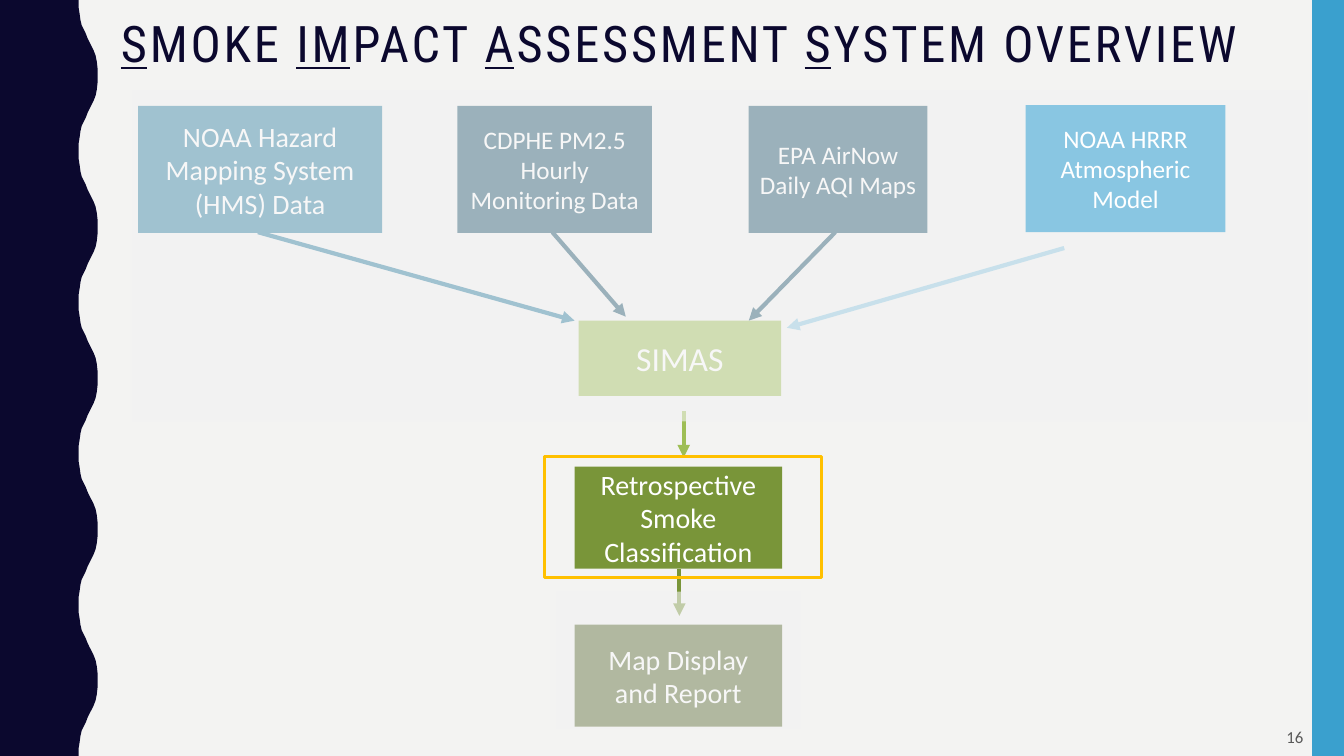
from dataclasses import dataclass

from lxml import etree
from pptx import Presentation, util as u
from pptx.dml.color import RGBColor
from pptx.enum import shapes, text
from pptx.oxml import ns


@dataclass(frozen=True)
class Theme:
    """Colours, fonts and type sizes of the slide."""
    paper: str = "F3F3F2"
    navy: str = "0B082E"
    blue: str = "3AA0CE"
    teal: str = "277A9F"
    deep: str = "1A516A"
    sky: str = "89C6E2"
    lime: str = "9EBE55"
    green: str = "799539"
    olive: str = "516326"
    veil: str = "F2F2F2"
    gold: str = "FFC000"
    grey: str = "595959"
    white: str = "FFFFFF"
    heading: str = "Roboto Condensed"
    body: str = "Calibri"
    title: int = 36
    hub: int = 24
    large: int = 20
    medium: int = 18
    small: int = 12


@dataclass(frozen=True)
class Box:
    """A rectangle in centimetres."""
    left: float
    top: float
    width: float
    height: float

    def inner(self, left, top, width, height):
        """Return a box placed relative to this one."""
        return Box(self.left + left, self.top + top, width, height)

    def lengths(self):
        """Return left, top, width and height as lengths."""
        return [u.Cm(side) for side in (self.left, self.top, self.width, self.height)]


THEME = Theme()
PAGE = Box(0, 0, 33.87, 19.05)
WAVE_PERIOD = 3.81
WAVE_RISE = [(1.98, 0), (1.98, 0.18), (2.01, 0.36), (2.03, 0.51), (2.06, 0.64),
             (2.11, 0.74), (2.16, 0.84), (2.21, 0.97), (2.26, 1.07), (2.31, 1.17),
             (2.36, 1.27), (2.41, 1.4), (2.44, 1.55), (2.46, 1.73), (2.46, 1.9)]


def color(code):
    """Turn a hex code into a colour."""
    return RGBColor.from_string(code)


def write_text(shape, spans, size=THEME.large, font=THEME.body, ink=THEME.white,
               align=text.PP_ALIGN.CENTER, anchor=text.MSO_ANCHOR.MIDDLE,
               spacing=None, tracking=None):
    """Fill a shape with one paragraph of (words, underlined) spans."""
    frame = shape.text_frame
    frame.word_wrap = True
    frame.auto_size = text.MSO_AUTO_SIZE.NONE
    frame.vertical_anchor = anchor
    para = frame.paragraphs[0]
    para.alignment = align
    if spacing:
        para.line_spacing = spacing
    for words, underlined in spans:
        span = para.add_run()
        span.text = words
        span.font.size = u.Pt(size)
        span.font.name = font
        span.font.color.rgb = color(ink)
        span.font.underline = underlined
        if tracking:
            span.font._element.set("spc", str(tracking * 100))


def add_box(page, box, fill=None, label=None, size=THEME.large, outline=None, alpha=None):
    """Draw a rectangle with optional fill, label, outline and opacity in percent."""
    shape = page.shapes.add_shape(shapes.MSO_SHAPE.RECTANGLE, *box.lengths())
    shape.shadow.inherit = False
    if fill:
        shape.fill.solid()
        shape.fill.fore_color.rgb = color(fill)
    else:
        shape.fill.background()
    if outline:
        shape.line.color.rgb = color(outline)
        shape.line.width = u.Pt(2.25)
    else:
        shape.line.fill.background()
    if alpha:
        tint = shape._element.spPr.find(ns.qn("a:solidFill"))[0]
        etree.SubElement(tint, ns.qn("a:alpha"), val=str(alpha * 1000))
    if label:
        write_text(shape, [(label, None)], size=size)


def add_arrow(page, box, start, end, ink):
    """Draw an arrow between two points given relative to a box."""
    ends = [u.Cm(value) for x, y in (start, end) for value in (box.left + x, box.top + y)]
    arrow = page.shapes.add_connector(shapes.MSO_CONNECTOR.STRAIGHT, *ends)
    arrow.line.color.rgb = color(ink)
    arrow.line.width = u.Pt(3)
    etree.SubElement(arrow.line._get_or_add_ln(), ns.qn("a:tailEnd"), type="triangle")
    etree.SubElement(arrow._element.spPr, ns.qn("a:effectLst"))


def draw_edges(page, box):
    """Draw the wavy left edge and the right band."""
    fall = [(x, WAVE_PERIOD - y) for x, y in reversed(WAVE_RISE)]
    points = [(box.left + x, box.top + y + turn * WAVE_PERIOD)
              for turn in range(5) for x, y in WAVE_RISE + fall]
    points.append((box.left, box.top + box.height))
    builder = page.shapes.build_freeform(u.Cm(box.left), u.Cm(box.top))
    builder.add_line_segments([(u.Cm(x), u.Cm(y)) for x, y in points])
    wave = builder.convert_to_shape()
    wave.shadow.inherit = False
    wave.fill.solid()
    wave.fill.fore_color.rgb = color(THEME.navy)
    wave.line.fill.background()
    add_box(page, box.inner(box.width - 0.8, 0, 0.8, box.height), THEME.blue)


def draw_title(page, box):
    """Place the title with the letters of the acronym underlined."""
    title = page.shapes.title
    title.left, title.top, title.width, title.height = box.lengths()
    spans = [("S", True), ("MOKE ", False), ("IM", True), ("PACT ", False),
             ("A", True), ("SSESSMENT ", False), ("S", True), ("YSTEM OVERVIEW", False)]
    write_text(title, spans, size=THEME.title, font=THEME.heading, ink=THEME.navy,
               align=text.PP_ALIGN.LEFT, anchor=text.MSO_ANCHOR.TOP,
               spacing=0.9, tracking=2)


def draw_number(page, box):
    """Place the page number."""
    number = page.shapes.add_textbox(*box.lengths())
    write_text(number, [("16", None)], size=THEME.small, ink=THEME.grey,
               align=text.PP_ALIGN.RIGHT)


def draw_results(page, box):
    """Draw the classification and report steps below the hub."""
    add_arrow(page, box, (3.51, 0), (3.51, 1.17), THEME.lime)
    steps = [("Retrospective Smoke Classification", 1.4, THEME.green),
             ("Map Display and Report", 5.38, THEME.olive)]
    for label, top, fill in steps:
        add_box(page, box.inner(0.76, top, 5.23, 2.57), fill, label)
    add_arrow(page, box, (3.4, 3.99), (3.4, 5.16), THEME.green)
    add_box(page, box.inner(0.3, 4.55, 6.15, 3.45), THEME.veil, alpha=60)
    add_box(page, box.inner(0, 1.14, box.width, 3.05), outline=THEME.gold)


def draw_inputs(page, box):
    """Draw the data sources feeding the hub, veiled except for the model."""
    add_box(page, box.inner(11.23, 5.79, 5.11, 1.9), THEME.lime, "SIMAS", THEME.hub)
    arrows = [((10.57, 3.56), (12.42, 5.69), THEME.deep),
              ((23.47, 3.96), (16.48, 5.97), THEME.sky),
              ((3.15, 3.56), (11.13, 5.79), THEME.teal),
              ((17.7, 3.56), (15.52, 5.79), THEME.deep)]
    for start, end, ink in arrows:
        add_arrow(page, box, start, end, ink)
    sources = [("NOAA Hazard Mapping System (HMS) Data", 0.13, 6.15, THEME.teal, THEME.large),
               ("CDPHE PM2.5 Hourly Monitoring Data", 8.18, 4.9, THEME.deep, THEME.medium),
               ("EPA AirNow Daily AQI Maps", 15.52, 4.5, THEME.deep, THEME.medium)]
    for label, left, width, fill, size in sources:
        add_box(page, box.inner(left, 0.38, width, 3.2), fill, label, size)
    add_box(page, box, THEME.veil, alpha=60)
    add_box(page, box.inner(22.5, 0.36, 5.03, 3.2), THEME.sky,
            "NOAA HRRR Atmospheric Model", THEME.medium)


def main():
    """Build and save the deck."""
    deck = Presentation()
    deck.slide_width, deck.slide_height = PAGE.lengths()[2:]
    page = deck.slides.add_slide(deck.slide_layouts.get_by_name("Title Only"))
    page.background.fill.solid()
    page.background.fill.fore_color.rgb = color(THEME.paper)
    draw_edges(page, PAGE)
    draw_title(page, PAGE.inner(2.79, 0.36, 30.68, 1.96))
    draw_number(page, PAGE.inner(30.71, 18.1, 2.39, 0.95))
    draw_results(page, PAGE.inner(13.72, 10.36, 6.99, 8))
    draw_inputs(page, PAGE.inner(3.35, 2.29, 29.59, 8.33))
    deck.save("out.pptx")


if __name__ == "__main__":
    main()
